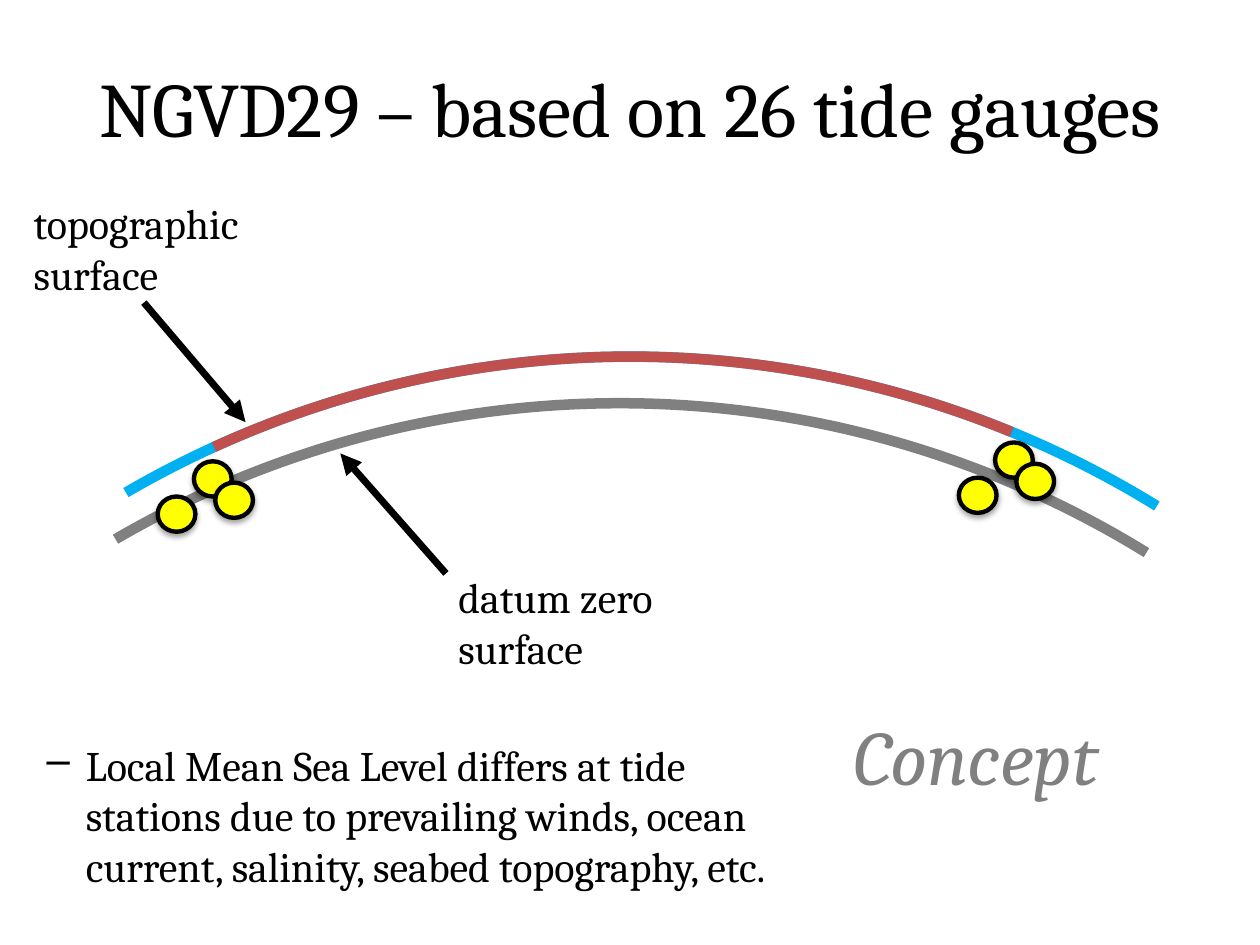
from lxml.etree import SubElement
from pptx import Presentation
from pptx.dml.color import RGBColor
from pptx.enum.shapes import MSO_CONNECTOR, MSO_SHAPE
from pptx.enum.text import MSO_ANCHOR, PP_ALIGN
from pptx.oxml.ns import qn
from pptx.util import Cm, Pt

THEME = {
    "font": "Cambria", "heading": 44, "body": 24,
    "black": "000000", "grey": "808080", "sea": "00B0F0",
    "land": "C0504D", "gauge": "FFFF00",
    "arc_line": 6, "gauge_line": 2.5, "arrow_line": 4,
}

# Positions and sizes are in centimetres, angles in degrees.
ARC_SIZE = (40.49, 40.54)
ARCS = [  # left, top, start angle, end angle, colour
    (-7.75, 8.13, 239.89, 301.6, "grey"),
    (-7.54, 7.19, 239.89, 301.6, "sea"),
    (-7.54, 7.19, 245.54, 292.3, "land"),
]
GAUGE_SIZE = (0.76, 0.71)
GAUGES = [(3.91, 9.3), (3.18, 10.01), (4.34, 9.73)]
COAST_SHIFTS = [(0, 0), (16.15, -0.38)]
HEADINGS = [  # text, box, colour, italic
    ("NGVD29 – based on 26 tide gauges", (0, 1.17, 25.4, 1.93), "black", False),
    ("Concept", (16.46, 14.22, 6.43, 1.93), "grey", True),
]
LABELS = [  # text, box
    ("topographic surface", (0.43, 3.86, 5.82, 2.31)),
    ("datum zero\nsurface", (8.99, 11.4, 5.82, 2.31)),
]
ARROWS = [  # from x, from y, to x, to y
    (2.9, 6.1, 4.95, 8.51),
    (8.99, 11.56, 6.86, 9.14),
]
NOTE = ("Local Mean Sea Level differs at tide stations due to prevailing winds, "
        "ocean current, salinity, seabed topography, etc.")
NOTE_BOX = (-0.58, 14.78, 17.3, 4.57)


def color(name):
    return RGBColor.from_string(THEME[name])


def lengths(values):
    return [Cm(value) for value in values]


def set_line(shape, color_name, width_name):
    shape.line.color.rgb = color(color_name)
    shape.line.width = Pt(THEME[width_name])


def add_arc(slide, left, top, start, end, color_name):
    arc = slide.shapes.add_shape(MSO_SHAPE.ARC, *lengths((left, top, *ARC_SIZE)))
    # Angles are stored in 60000ths of a degree, adjustments in 100000ths.
    for index, angle in enumerate((start, end)):
        arc.adjustments[index] = angle * 0.6
    arc.fill.background()
    arc.shadow.inherit = False
    set_line(arc, color_name, "arc_line")


def add_gauge(slide, left, top):
    gauge = slide.shapes.add_shape(MSO_SHAPE.FLOWCHART_CONNECTOR,
                                   *lengths((left, top, *GAUGE_SIZE)))
    gauge.fill.solid()
    gauge.fill.fore_color.rgb = color("gauge")
    set_line(gauge, "black", "gauge_line")
    gauge.shadow.inherit = False
    effects = gauge.element.spPr.find(qn("a:effectLst"))
    shadow = SubElement(effects, qn("a:outerShdw"), blurRad=str(Pt(3.1)),
                        dist=str(Pt(1.8)), dir="5400000", rotWithShape="0")
    shade = SubElement(shadow, qn("a:srgbClr"), val=THEME["black"])
    SubElement(shade, qn("a:alpha"), val="35000")


def add_arrow(slide, *ends):
    arrow = slide.shapes.add_connector(MSO_CONNECTOR.STRAIGHT, *lengths(ends))
    set_line(arrow, "black", "arrow_line")
    SubElement(arrow.line._get_or_add_ln(), qn("a:tailEnd"), type="triangle")
    SubElement(arrow.element.spPr, qn("a:effectLst"))


def add_text(slide, text, box, size_name, color_name="black", italic=False):
    frame = slide.shapes.add_textbox(*lengths(box)).text_frame
    frame.word_wrap = True
    frame.text = text
    for paragraph in frame.paragraphs:
        for run in paragraph.runs:
            run.font.name = THEME["font"]
            run.font.size = Pt(THEME[size_name])
            run.font.color.rgb = color(color_name)
            run.font.italic = italic
    return frame


def add_heading(slide, text, box, color_name, italic):
    frame = add_text(slide, text, box, "heading", color_name, italic)
    frame.vertical_anchor = MSO_ANCHOR.MIDDLE
    frame.margin_left = frame.margin_right = frame.margin_bottom = 0
    frame.margin_top = Cm(0.05)
    paragraph = frame.paragraphs[0]
    paragraph.alignment = PP_ALIGN.CENTER
    paragraph.runs[0].font._element.set("spc", "-10")


def add_note(slide):
    paragraph = add_text(slide, NOTE, NOTE_BOX, "body").paragraphs[0]
    properties = paragraph._p.get_or_add_pPr()
    properties.set("marL", str(Cm(2.06)))
    properties.set("indent", str(Cm(-0.79)))
    SubElement(properties, qn("a:buChar"), char="–")


def main():
    presentation = Presentation()
    presentation.slide_width, presentation.slide_height = Cm(25.4), Cm(19.05)
    slide = presentation.slides.add_slide(presentation.slide_layouts[6])
    for arc in ARCS:
        add_arc(slide, *arc)
    for shift_x, shift_y in COAST_SHIFTS:
        for left, top in GAUGES:
            add_gauge(slide, left + shift_x, top + shift_y)
    for heading in HEADINGS:
        add_heading(slide, *heading)
    for arrow in ARROWS:
        add_arrow(slide, *arrow)
    for text, box in LABELS:
        add_text(slide, text, box, "body")
    add_note(slide)
    presentation.save("out.pptx")


if __name__ == "__main__":
    main()
